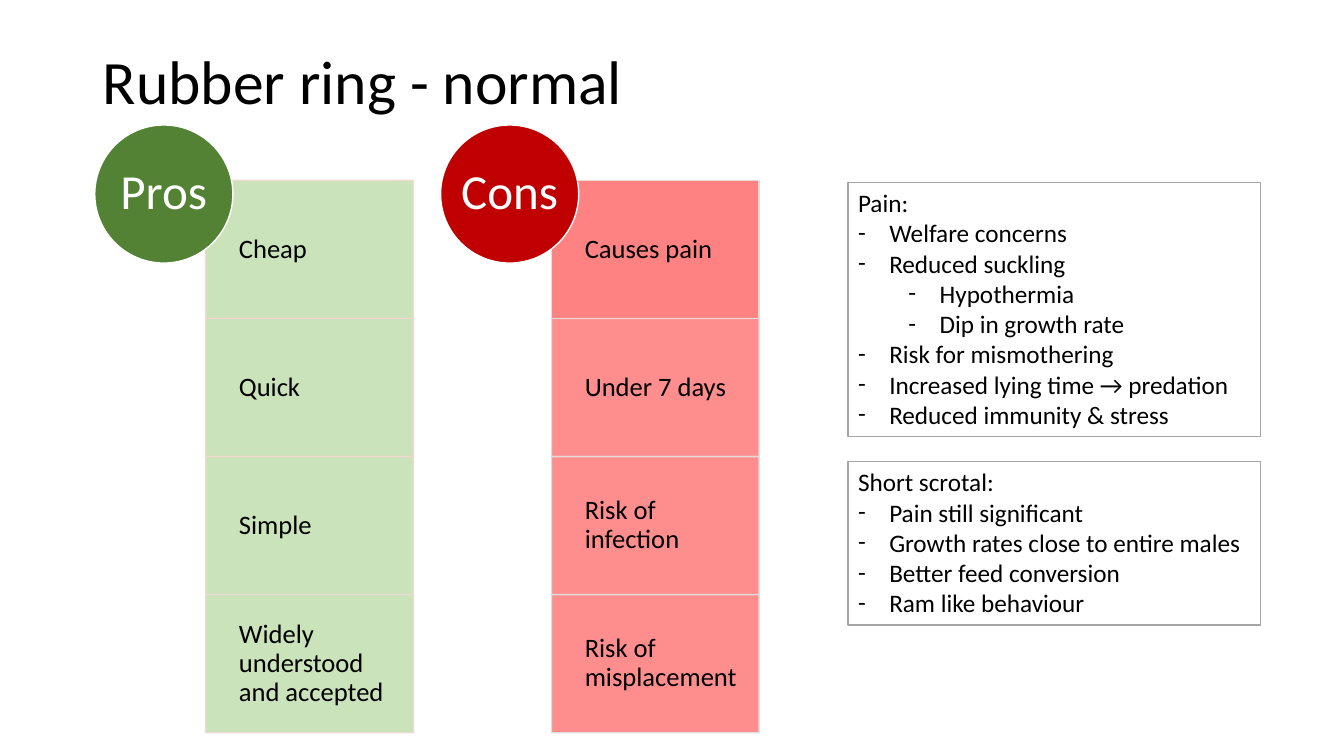
import pptx
import pptx.dml.color
import pptx.enum.shapes
import pptx.enum.text
import pptx.oxml.ns
import pptx.util
from lxml import etree

Inches = pptx.util.Inches
SHAPE = pptx.enum.shapes.MSO_SHAPE
ALIGN = pptx.enum.text.PP_ALIGN
ANCHOR = pptx.enum.text.MSO_ANCHOR
qn = pptx.oxml.ns.qn

COLORS = {
    "black": "000000", "white": "FFFFFF", "grey": "A5A5A5",
    "green": "548235", "pale green": "C5E0B4",
    "red": "C00000", "pale red": "FE8282",
}


def paint(shape, fill, line, opacity=100):
    """Solid fill and 1 pt outline, both with the same opacity in percent."""
    shape.fill.solid()
    shape.fill.fore_color.rgb = pptx.dml.color.RGBColor.from_string(fill)
    shape.line.color.rgb = pptx.dml.color.RGBColor.from_string(line)
    shape.line.width = pptx.util.Pt(1)
    if opacity < 100:
        for color in shape.element.spPr.iter(qn("a:srgbClr")):
            etree.SubElement(color, qn("a:alpha"), val=str(opacity * 1000))


def write(frame, text, size, color="black", align=ALIGN.LEFT, anchor=ANCHOR.MIDDLE,
          spacing=0.9, insets=(0.1, 0.05, 0.1, 0.05), bullets=False):
    """One paragraph per line; with bullets, each leading tab is one level."""
    frame.word_wrap = True
    frame.auto_size = pptx.enum.text.MSO_AUTO_SIZE.NONE
    frame.vertical_anchor = anchor
    frame.margin_left, frame.margin_top, frame.margin_right, frame.margin_bottom = map(Inches, insets)
    for index, entry in enumerate(text.split("\n")):
        paragraph = frame.paragraphs[0] if index == 0 else frame.add_paragraph()
        depth = entry.count("\t")
        if bullets:
            props = paragraph._p.get_or_add_pPr()
            hang = Inches(0.31) if depth else 0
            props.set("marL", str(hang + Inches(0.5) * max(depth - 1, 0)))
            props.set("indent", str(-hang))
            if depth:
                paragraph.level = depth - 1
                etree.SubElement(props, qn("a:buFont"), typeface="Calibri")
                etree.SubElement(props, qn("a:buChar"), char="-")
            else:
                etree.SubElement(props, qn("a:buNone"))
        paragraph.alignment = align
        paragraph.line_spacing = spacing
        paragraph.space_before = pptx.util.Pt(0)
        run = paragraph.add_run()
        run.text = entry.strip("\t")
        run.font.size = pptx.util.Pt(size)
        run.font.name = "Calibri"
        run.font.color.rgb = pptx.dml.color.RGBColor.from_string(COLORS[color])


deck = pptx.Presentation()
deck.slide_width, deck.slide_height = Inches(13.33), Inches(7.5)
slide = deck.slides.add_slide(deck.slide_layouts[3])
title, pain_notes, scrotal_notes = slide.placeholders

# Title
title.left, title.top, title.width, title.height = map(Inches, (0.92, 0.11, 11.5, 1.45))
write(title.text_frame, "Rubber ring - normal", 44)

# Pros and cons: a column of cells with a circle on its top left corner
CELL_WIDTH, CELL_HEIGHT, CELL_TOP, CIRCLE = 2.06, 1.37, 1.79, 1.37
columns = [
    ("Pros", 0.94, "green", "pale green", [
        ("Cheap", "F8D7CE", 90), ("Quick", "F5D7D0", 90),
        ("Simple", "F2D8D3", 90), ("Widely understood and accepted", "EED9D5", 90)]),
    ("Cons", 4.37, "red", "pale red", [
        ("Causes pain", "EBDAD8", 100), ("Under 7 days", "E8DCDB", 90),
        ("Risk of infection", "E4DEDE", 90), ("Risk of misplacement", "E1E1E1", 90)]),
]
for heading, left, strong, pale, points in columns:
    for row, (point, border, opacity) in enumerate(points):
        cell = slide.shapes.add_shape(
            SHAPE.RECTANGLE, Inches(left + 1.1), Inches(CELL_TOP + row * CELL_HEIGHT),
            Inches(CELL_WIDTH), Inches(CELL_HEIGHT))
        cell.shadow.inherit = False
        paint(cell, COLORS[pale], border, opacity)
        write(cell.text_frame, point, 19, insets=(0.33, 0.15, 0.15, 0.15))
    circle = slide.shapes.add_shape(
        SHAPE.OVAL, Inches(left), Inches(1.24), Inches(CIRCLE), Inches(CIRCLE))
    circle.shadow.inherit = False
    paint(circle, COLORS[strong], COLORS["white"])
    write(circle.text_frame, heading, 35, color="white", align=ALIGN.CENTER, insets=(0, 0, 0, 0))

# Notes on the right
notes = [
    (pain_notes, 1.81, 2.52, "Pain:\n\tWelfare concerns\n\tReduced suckling\n"
     "\t\tHypothermia\n\t\tDip in growth rate\n\tRisk for mismothering\n"
     "\tIncreased lying time → predation\n\tReduced immunity & stress"),
    (scrotal_notes, 4.58, 1.62, "Short scrotal:\n\tPain still significant\n"
     "\tGrowth rates close to entire males\n\tBetter feed conversion\n\tRam like behaviour"),
]
for note, top, height, text in notes:
    note.left, note.top, note.width, note.height = map(Inches, (8.41, top, 4.09, height))
    paint(note, COLORS["white"], COLORS["grey"])
    write(note.text_frame, text, 18, anchor=ANCHOR.TOP, spacing=1.0, bullets=True)

deck.save("out.pptx")
